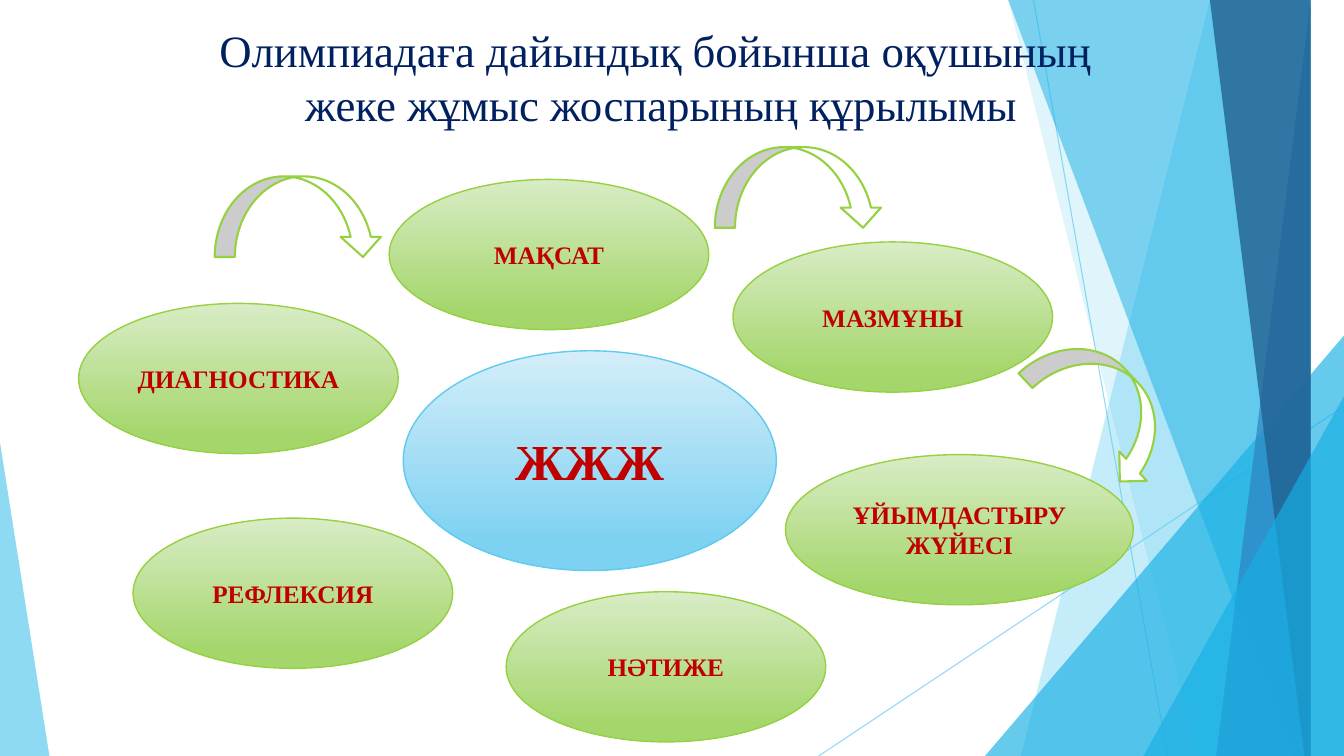
import pptx
import pptx.util
import pptx.dml.color
import pptx.enum.shapes
import pptx.enum.text
from lxml import etree

INK = {
    "navy": "002060", "red": "C00000", "white": "FFFFFF",
    "sky": "5FCBEF", "cyan": "17B0E4", "blue": "2E83C3", "deep": "226292",
    "green": "96D141", "leaf": "A5D66C", "mint": "D8ECC5",
    "pool": "7DD1F1", "ice": "D4EEF9",
}
FONT = "Times New Roman"
WIDE, HIGH = 13.33, 7.5

TITLE = "Олимпиадаға дайындық бойынша оқушының \vжеке жұмыс жоспарының құрылымы"
RAYS = [(10.25, 0, 11.58, HIGH), (WIDE, 4.03, 8.12, HIGH)]
DECOR = [
    ("band", (12.28, 10.04), "sky", 36),
    ("band", (10.5, 11.83), "sky", 20),
    ("wedge", (9.77, 3.33, 3.56, 1), "cyan", 66),
    ("band", (10.21, 12.91), "cyan", 50),
    ("band", (13.03, 11.92), "blue", 70),
    ("band", (11.96, 13.18), "deep", 80),
    ("wedge", (11.34, 3.93, 1.99, 1), "cyan", 66),
    ("wedge", (0, 4.39, 0.49, 0), "sky", 70),
]
STEP = (3.17, 1.49, 18, "mint", "leaf", "green")
BROAD = (3.45,) + STEP[1:]
CORE = (3.7, 2.18, 36, "ice", "pool", "sky")
OVALS = [
    ("МАҚСАТ", 3.86, 1.78, STEP),
    ("НӘТИЖЕ", 5.02, 5.87, STEP),
    ("ДИАГНОСТИКА", 0.78, 3.01, STEP),
    ("ҰЙЫМДАСТЫРУ ЖҮЙЕСІ", 7.79, 4.51, BROAD),
    ("МАЗМҰНЫ", 7.27, 2.4, STEP),
    ("РЕФЛЕКСИЯ", 1.32, 5.14, STEP),
    ("ЖЖЖ", 4, 3.48, CORE),
]
ARROWS = [(2.13, 1.75, 0), (7.09, 1.46, 0), (10.13, 3.64, 46.9)]

Inches, Pt = pptx.util.Inches, pptx.util.Pt
KIND = pptx.enum.shapes.MSO_SHAPE
ANCHOR = pptx.enum.text.MSO_ANCHOR

deck = pptx.Presentation()
deck.slide_width, deck.slide_height = Inches(WIDE), Inches(HIGH)
shapes = deck.slides.add_slide(deck.slide_layouts[6]).shapes


def tint(name):
    return pptx.dml.color.RGBColor.from_string(INK[name])


def tag(node, name, **attrs):
    return etree.SubElement(node, pptx.oxml.ns.qn(name), **attrs)


def fade(shape, alpha):
    for color in shape._element.spPr.iter(pptx.oxml.ns.qn("a:srgbClr")):
        tag(color, "a:alpha", val=str(alpha * 1000))


def place(kind, *box):
    return shapes.add_shape(kind, *map(Inches, box))


def edge(shape, name, width):
    shape.line.color.rgb = tint(name)
    shape.line.width = Pt(width)


def write(shape, text, size, name, bold, anchor):
    frame = shape.text_frame
    frame.word_wrap = True
    frame.vertical_anchor = anchor
    para = frame.paragraphs[0]
    para.text = text
    para.alignment = pptx.enum.text.PP_ALIGN.CENTER
    font = para.font
    font.name, font.size, font.bold = FONT, Pt(size), bold
    font.color.rgb = tint(name)


def band(top, foot):
    pen = shapes.build_freeform(top, 0, scale=Inches(1))
    pen.add_line_segments([(WIDE, 0), (WIDE, HIGH), (foot, HIGH)])
    return pen.convert_to_shape()


def wedge(left, top, width, tip):
    shape = place(KIND.ISOSCELES_TRIANGLE, left, top, width, HIGH - top)
    shape.adjustments[0] = tip
    return shape


for ends in RAYS:
    ray = shapes.add_connector(
        pptx.enum.shapes.MSO_CONNECTOR.STRAIGHT, *map(Inches, ends))
    edge(ray, "sky", 0.75)
    fade(ray, 70)
    tag(ray._element.spPr, "a:effectLst")

for kind, args, name, alpha in DECOR:
    shape = {"band": band, "wedge": wedge}[kind](*args)
    shape.shadow.inherit = False
    shape.fill.solid()
    shape.fill.fore_color.rgb = tint(name)
    shape.line.fill.background()
    fade(shape, alpha)

title = shapes.add_textbox(*map(Inches, (0.83, 0.18, 11.46, 1.44)))
write(title, TITLE, 32, "navy", False, ANCHOR.TOP)

for text, left, top, (width, height, size, light, dark, rim) in OVALS:
    oval = place(KIND.OVAL, left, top, width, height)
    oval.shadow.inherit = False
    oval.fill.gradient()
    oval.fill.gradient_angle = 270
    for stop, spot, name in zip(oval.fill.gradient_stops, (0, 0.88), (light, dark)):
        stop.position = spot
        stop.color.rgb = tint(name)
    edge(oval, rim, 1)
    write(oval, text, size, "red", True, ANCHOR.MIDDLE)

for left, top, turn in ARROWS:
    arrow = place(KIND.CURVED_DOWN_ARROW, left, top, 1.67, 0.8)
    arrow.shadow.inherit = False
    arrow.rotation = turn
    arrow.fill.solid()
    arrow.fill.fore_color.rgb = tint("white")
    edge(arrow, "green", 1.5)

deck.save("out.pptx")
